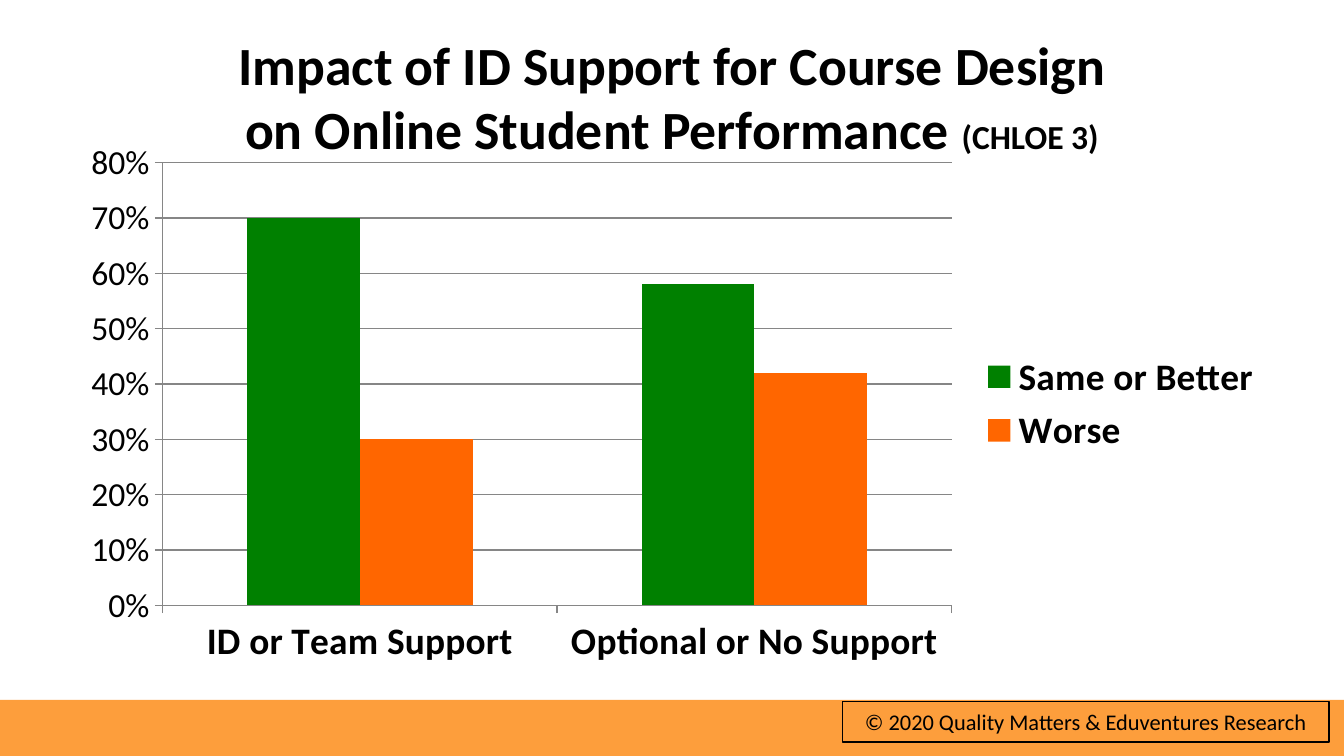
import pptx
import pptx.chart.data
import pptx.dml.color
import pptx.enum.chart
import pptx.enum.shapes
import pptx.enum.text
import pptx.util

Pt = pptx.util.Pt
CENTER = pptx.enum.text.PP_ALIGN.CENTER
MIDDLE = pptx.enum.text.MSO_ANCHOR.MIDDLE
TICK = pptx.enum.chart.XL_TICK_MARK

# Content
HEADING = [
    ("Impact of ID Support for Course Design\von Online Student Performance ", 28.8),
    ("(CHLOE 3)", 18),
]
CREDIT = "© 2020 Quality Matters & Eduventures Research"
SUPPORT_LEVELS = ["ID or Team Support", "Optional or No Support"]
OUTCOMES = [
    ("Same or Better", (0.70, 0.58), "008000"),
    ("Worse", (0.30, 0.42), "FF6600"),
]

# Layout, in points: left, top, width, height
SLIDE_WIDTH, SLIDE_HEIGHT = 720, 405
MARGIN = 36
BODY_WIDTH = SLIDE_WIDTH - 2 * MARGIN
BAND_TOP = 375
HEADING_BOX = (MARGIN, 39, BODY_WIDTH, 54)
CHART_BOX = (MARGIN, 70.5, BODY_WIDTH, 291.5)
BAND_BOX = (0, BAND_TOP, SLIDE_WIDTH, SLIDE_HEIGHT - BAND_TOP)
CREDIT_BOX = (451.5, 375.75, 260.5, 21.75)


def rgb(hex_color):
    return pptx.dml.color.RGBColor.from_string(hex_color)


def points(box):
    return [Pt(length) for length in box]


def apply(target, **values):
    for attribute, value in values.items():
        setattr(target, attribute, value)


def format_font(font, size, bold=False):
    apply(font, name="Calibri", size=Pt(size), bold=bold)
    font.color.rgb = rgb("000000")


def add_rectangle(slide, box):
    rectangle = slide.shapes.add_shape(
        pptx.enum.shapes.MSO_SHAPE.RECTANGLE, *points(box))
    rectangle.shadow.inherit = False
    return rectangle


prs = pptx.Presentation()
apply(prs, slide_width=Pt(SLIDE_WIDTH), slide_height=Pt(SLIDE_HEIGHT))
slide = prs.slides.add_slide(prs.slide_layouts[5])

# Footer band and credit
band = add_rectangle(slide, BAND_BOX)
band.fill.solid()
band.fill.fore_color.rgb = rgb("FD9E3C")
band.line.fill.background()

credit = add_rectangle(slide, CREDIT_BOX)
credit.fill.background()
credit.line.color.rgb = rgb("000000")
credit.line.width = Pt(0.75)
apply(credit.text_frame, text=CREDIT, word_wrap=True, vertical_anchor=MIDDLE,
      margin_top=Pt(3.6), margin_bottom=Pt(3.6))
credit_line = credit.text_frame.paragraphs[0]
credit_line.alignment = CENTER
format_font(credit_line.font, 12)

# Heading; the deep bottom margin lifts its two lines above the chart
heading = slide.shapes.title
apply(heading, **dict(zip(("left", "top", "width", "height"), points(HEADING_BOX))))
apply(heading.text_frame, word_wrap=True, vertical_anchor=MIDDLE,
      auto_size=pptx.enum.text.MSO_AUTO_SIZE.NONE,
      margin_top=Pt(3.6), margin_bottom=Pt(33))
heading.text_frame.text = HEADING[0][0]
heading_lines = heading.text_frame.paragraphs[0]
heading_lines.alignment = CENTER
heading_lines.add_run().text = HEADING[1][0]
for run in heading_lines.runs:
    format_font(run.font, HEADING[1][1] if run.text == HEADING[1][0] else HEADING[0][1], True)

# Chart
performance = pptx.chart.data.CategoryChartData(number_format="0%")
performance.categories = SUPPORT_LEVELS
for name, shares, _ in OUTCOMES:
    performance.add_series(name, shares)
chart = slide.shapes.add_chart(
    pptx.enum.chart.XL_CHART_TYPE.COLUMN_CLUSTERED,
    *points(CHART_BOX), performance).chart
apply(chart, has_title=False, has_legend=True)
format_font(chart.font, 18)

columns = chart.plots[0]
apply(columns, gap_width=150, overlap=0, vary_by_categories=False)
for series, (_, _, color) in zip(columns.series, OUTCOMES):
    series.format.fill.solid()
    series.format.fill.fore_color.rgb = rgb(color)

apply(chart.legend, include_in_layout=False,
      position=pptx.enum.chart.XL_LEGEND_POSITION.RIGHT)
format_font(chart.legend.font, 20, True)

# Axes
levels, share = chart.category_axis, chart.value_axis
apply(share, minimum_scale=0, maximum_scale=0.8, major_unit=0.1,
      has_major_gridlines=True)
apply(share.tick_labels, number_format="0%", number_format_is_linked=False)
format_font(levels.tick_labels.font, 20, True)
format_font(share.tick_labels.font, 18)
for axis in (levels, share):
    apply(axis, major_tick_mark=TICK.OUTSIDE, minor_tick_mark=TICK.NONE)
for ruled in (levels, share, share.major_gridlines):
    ruled.format.line.color.rgb = rgb("868686")
    ruled.format.line.width = Pt(0.75)

prs.save("out.pptx")
